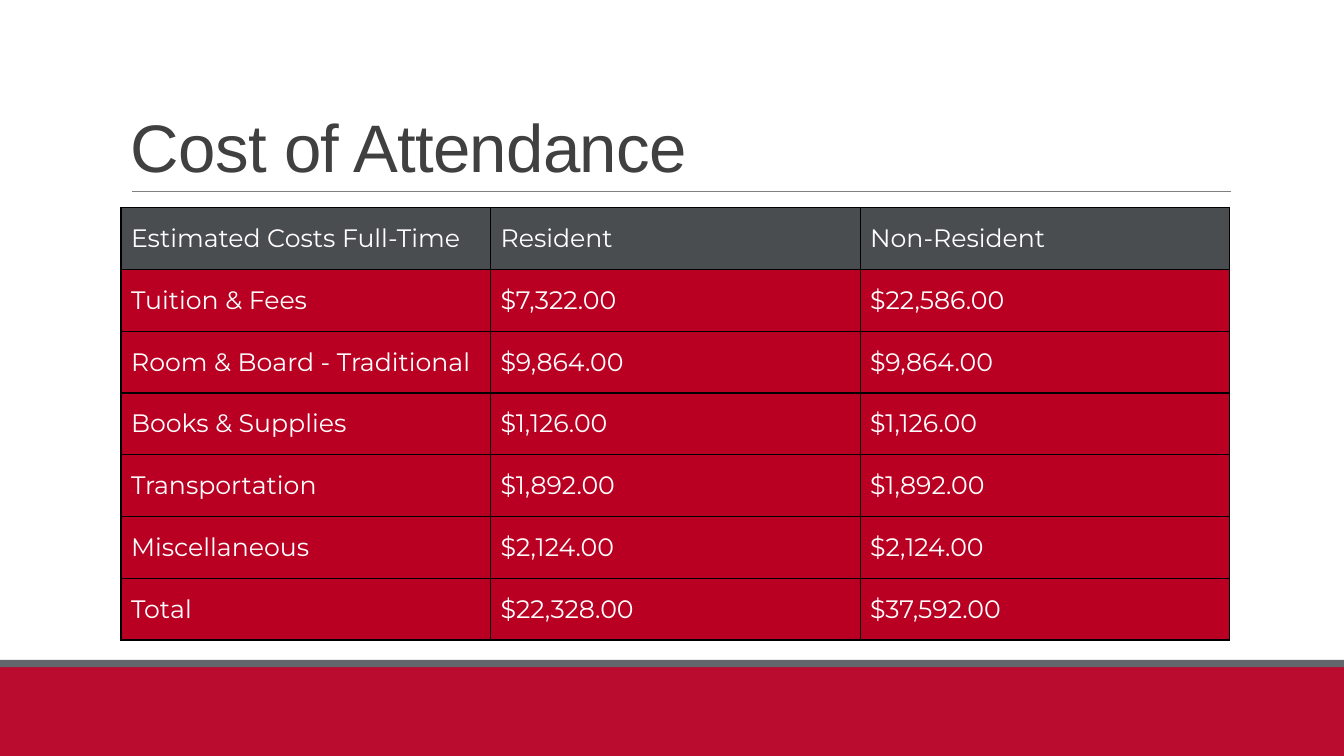
from dataclasses import dataclass

from lxml import etree
from pptx import Presentation, util as u
from pptx.dml.color import RGBColor
from pptx.enum import shapes, text
from pptx.oxml.ns import qn


@dataclass(frozen=True)
class Theme:
    red: str = "BA0C2F"
    gray: str = "63666A"
    rule: str = "808080"
    ink: str = "404040"
    head: str = "4A4D50"
    body: str = "B90022"
    edge: str = "000000"
    light: str = "FFFFFF"
    title_font: str = "Arial"
    table_font: str = "Montserrat"
    title_size: int = 48
    table_size: int = 18


THEME = Theme()
WIDTH, HEIGHT = 33.87, 19.05

COSTS = [
    ("Estimated Costs Full-Time", "Resident", "Non-Resident"),
    ("Tuition & Fees", "$7,322.00", "$22,586.00"),
    ("Room & Board - Traditional", "$9,864.00", "$9,864.00"),
    ("Books & Supplies", "$1,126.00", "$1,126.00"),
    ("Transportation", "$1,892.00", "$1,892.00"),
    ("Miscellaneous", "$2,124.00", "$2,124.00"),
    ("Total", "$22,328.00", "$37,592.00"),
]


def color(code):
    return RGBColor.from_string(code)


def style(run, font, size, code):
    run.font.name = font
    run.font.size = u.Pt(size)
    run.font.color.rgb = color(code)


def add_bar(slide, left, top, width, height, code):
    bar = slide.shapes.add_shape(
        shapes.MSO_SHAPE.RECTANGLE, u.Cm(left), u.Cm(top), u.Cm(width), u.Cm(height))
    bar.shadow.inherit = False
    bar.fill.solid()
    bar.fill.fore_color.rgb = color(code)
    bar.line.fill.background()


def add_footer(slide, left, top, width, height):
    """Red band under a thin gray stripe."""
    stripe = 0.18
    add_bar(slide, left, top + stripe, width, height - stripe, THEME.red)
    add_bar(slide, left, top, width, stripe, THEME.gray)


def add_title(slide, left, top, width, height, words):
    """Title sitting on a thin rule at the foot of its box."""
    base = u.Cm(top + height)
    rule = slide.shapes.add_connector(
        shapes.MSO_CONNECTOR.STRAIGHT,
        u.Cm(left + 0.28), base, u.Cm(left + width + 0.02), base)
    rule.line.color.rgb = color(THEME.rule)
    rule.line.width = u.Pt(0.5)
    etree.SubElement(rule._element.spPr, qn("a:effectLst"))

    box = slide.shapes.add_textbox(u.Cm(left), u.Cm(top), u.Cm(width), u.Cm(height))
    frame = box.text_frame
    frame.word_wrap = True
    frame.vertical_anchor = text.MSO_ANCHOR.BOTTOM
    frame.text = words
    para = frame.paragraphs[0]
    para.line_spacing = 0.85
    run = para.runs[0]
    style(run, THEME.title_font, THEME.title_size, THEME.ink)
    run.font._element.set("spc", "-50")


def add_edges(cell):
    props = cell._tc.get_or_add_tcPr()
    for side in ("lnL", "lnR", "lnT", "lnB"):
        line = etree.SubElement(props, qn(f"a:{side}"), w=str(u.Pt(1)))
        fill = etree.SubElement(line, qn("a:solidFill"))
        etree.SubElement(fill, qn("a:srgbClr"), val=THEME.edge)


def add_costs(slide, left, top, width, height, rows):
    """Table with equal columns and rows and a dark heading row."""
    count, span = len(rows), len(rows[0])
    table = slide.shapes.add_table(
        count, span, u.Cm(left), u.Cm(top), u.Cm(width), u.Cm(height)).table
    for col in table.columns:
        col.width = u.Cm(width / span)
    for r, row in enumerate(rows):
        table.rows[r].height = u.Cm(height / count)
        for c, words in enumerate(row):
            cell = table.cell(r, c)
            add_edges(cell)
            cell.fill.solid()
            cell.fill.fore_color.rgb = color(THEME.body if r else THEME.head)
            cell.vertical_anchor = text.MSO_ANCHOR.MIDDLE
            cell.text_frame.text = words
            run = cell.text_frame.paragraphs[0].runs[0]
            style(run, THEME.table_font, THEME.table_size, THEME.light)
            run.font.bold = False


def main():
    deck = Presentation()
    deck.slide_width, deck.slide_height = u.Cm(WIDTH), u.Cm(HEIGHT)
    slide = deck.slides.add_slide(deck.slide_layouts[6])

    left, width, foot = 3.05, 27.94, 16.63
    add_footer(slide, 0, foot, WIDTH, HEIGHT - foot)
    add_title(slide, left, 0.79, width, 4.03, "Cost of Attendance")
    add_costs(slide, left, 5.23, width, 10.9, COSTS)
    deck.save("out.pptx")


if __name__ == "__main__":
    main()
